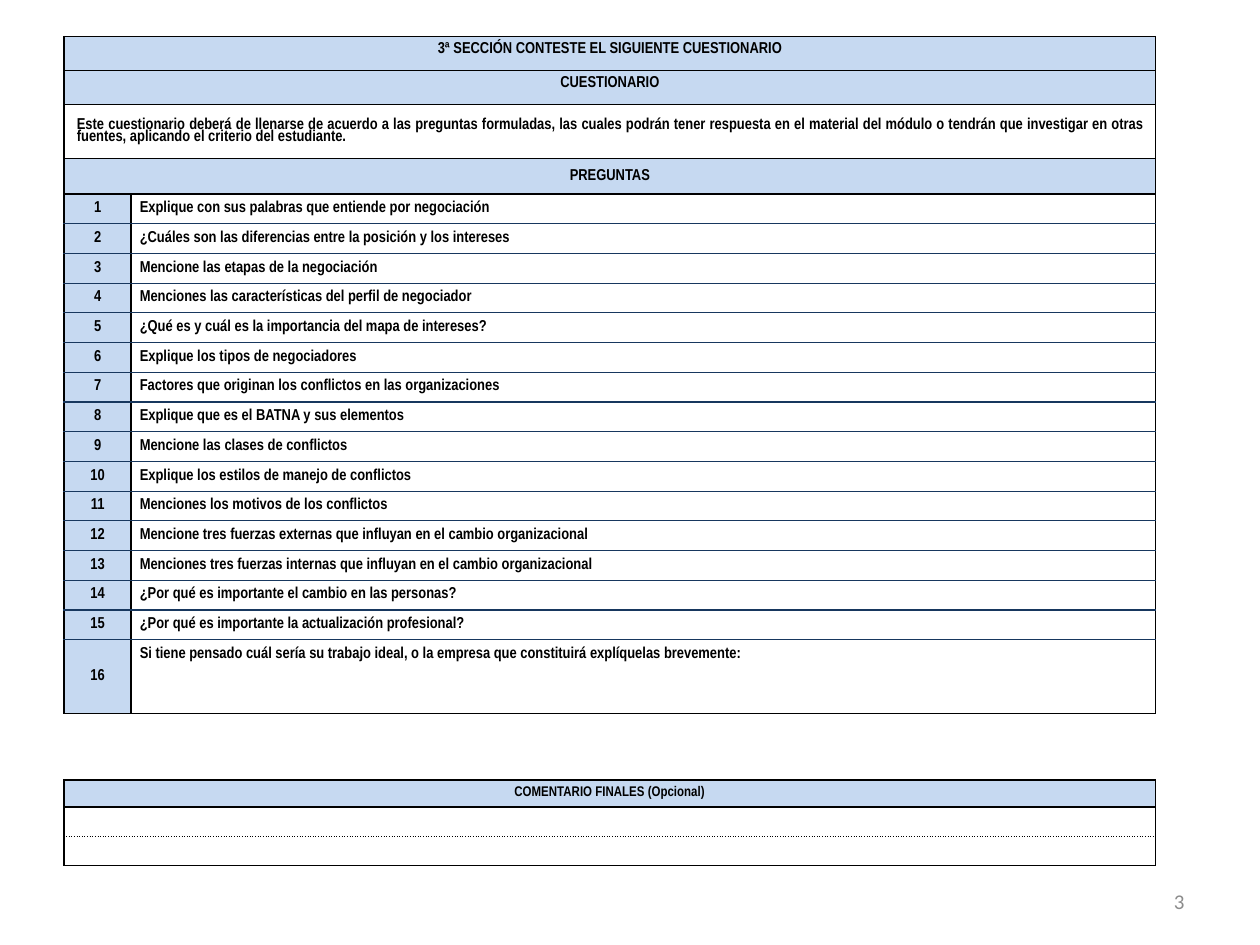
from dataclasses import dataclass

from lxml import etree
from pptx import Presentation
from pptx import util as u
from pptx.dml import color
from pptx.enum import text
from pptx.oxml import ns


@dataclass(frozen=True)
class Theme:
    """Colours, fonts and type sizes of the slide."""
    band: str = "C6D9F1"
    paper: str = "FFFFFF"
    ink: str = "000000"
    rule: str = "17375E"
    muted: str = "8C8C8C"
    table_font: str = "Arial Narrow"
    number_font: str = "Calibri"
    body: float = 9
    small: float = 8
    number: float = 12


THEME = Theme()
SOLID = (THEME.ink, 1, "solid")
THIN = (THEME.rule, 0.75, "solid")
DOTTED = (THEME.ink, 0.75, "sysDot")
CENTER, JUSTIFY = text.PP_ALIGN.CENTER, text.PP_ALIGN.JUSTIFY
TOP, MIDDLE = text.MSO_ANCHOR.TOP, text.MSO_ANCHOR.MIDDLE

HEADINGS = [
    ("3ª SECCIÓN CONTESTE EL SIGUIENTE CUESTIONARIO", 0.27, THEME.band, CENTER, TOP),
    ("CUESTIONARIO", 0.27, THEME.band, CENTER, TOP),
    ("Este cuestionario deberá de llenarse de acuerdo a las preguntas formuladas, "
     "las cuales podrán tener respuesta en el material del módulo o tendrán que "
     "investigar en otras fuentes, aplicando el criterio del estudiante.",
     0.43, None, JUSTIFY, MIDDLE),
    ("PREGUNTAS", 0.28, THEME.band, CENTER, MIDDLE),
]
QUESTIONS = [
    "Explique con sus palabras que entiende por negociación",
    "¿Cuáles son las diferencias entre la posición y los intereses",
    "Mencione las etapas de la negociación",
    "Menciones las características del perfil de negociador",
    "¿Qué es y cuál es la importancia del mapa de intereses?",
    "Explique los tipos de negociadores",
    "Factores que originan los conflictos en las organizaciones",
    "Explique que es el BATNA y sus elementos",
    "Mencione las clases de conflictos",
    "Explique los estilos de manejo de conflictos",
    "Menciones los motivos de los conflictos",
    "Mencione tres fuerzas externas que influyan en el cambio organizacional",
    "Menciones tres fuerzas internas que influyan en el cambio organizacional",
    "¿Por qué es importante el cambio en las personas?",
    "¿Por qué es importante la actualización profesional?",
    "Si tiene pensado cuál sería su trabajo ideal, o la empresa que constituirá "
    "explíquelas brevemente:",
]


def style_font(font, name, size, rgb, bold=False):
    """Give a font its face, size, colour and weight."""
    font.name, font.size, font.bold = name, u.Pt(size), bold
    font.color.rgb = color.RGBColor.from_string(rgb)


def set_borders(cell, top=SOLID, bottom=SOLID):
    """Draw solid sides and the given top and bottom; None leaves an edge open."""
    properties = cell._tc.get_or_add_tcPr()
    edges = (("a:lnL", SOLID), ("a:lnR", SOLID), ("a:lnT", top), ("a:lnB", bottom))
    for position, (tag, edge) in enumerate(edges):
        line = etree.Element(ns.qn(tag))
        properties.insert(position, line)
        if edge is None:
            etree.SubElement(line, ns.qn("a:noFill"))
            continue
        rgb, width, dash = edge
        line.set("w", str(int(u.Pt(width))))
        fill = etree.SubElement(line, ns.qn("a:solidFill"))
        etree.SubElement(fill, ns.qn("a:srgbClr"), val=rgb)
        etree.SubElement(line, ns.qn("a:prstDash"), val=dash)


def fill_cell(cell, words="", fill=None, align=CENTER, anchor=MIDDLE,
              size=THEME.body, margins=(0.1, 0.05), top=SOLID, bottom=SOLID):
    """Write one table cell with its fill, margins and borders."""
    cell.margin_left = cell.margin_right = u.Inches(margins[0])
    cell.margin_top = cell.margin_bottom = u.Inches(margins[1])
    cell.vertical_anchor = anchor
    if fill:
        cell.fill.solid()
        cell.fill.fore_color.rgb = color.RGBColor.from_string(fill)
    else:
        cell.fill.background()
    set_borders(cell, top, bottom)
    paragraph = cell.text_frame.paragraphs[0]
    paragraph.text = words
    paragraph.alignment = align
    paragraph.line_spacing = 0.85
    for run in paragraph.runs:
        style_font(run.font, THEME.table_font, size, THEME.ink, True)
    if not words:
        etree.SubElement(paragraph._p, ns.qn("a:endParaRPr"), sz=str(int(size * 100)))


def add_grid(slide, box, widths, heights):
    """Add a plain table at the box with the given column widths and row heights."""
    left, top, width = box
    frame = slide.shapes.add_table(
        len(heights), len(widths), u.Inches(left), u.Inches(top),
        u.Inches(width), u.Inches(sum(heights)))
    grid = frame.table
    grid.first_row = grid.horz_banding = False
    for column, size in zip(grid.columns, widths):
        column.width = u.Inches(size)
    for row, size in zip(grid.rows, heights):
        row.height = u.Inches(size)
    return grid


def add_questionnaire(slide, box):
    """Place the headings and the numbered questions in one table."""
    number_width, question_height, answer_height = 0.53, 0.236, 0.35
    heights = [heading[1] for heading in HEADINGS]
    heights += [question_height] * len(QUESTIONS) + [answer_height]
    grid = add_grid(slide, box, [number_width, box[2] - number_width], heights)

    for row, (words, _, fill, align, anchor) in enumerate(HEADINGS):
        fill_cell(grid.cell(row, 0), words, fill, align, anchor)
        fill_cell(grid.cell(row, 1))
        grid.cell(row, 0).merge(grid.cell(row, 1))

    first, last = len(HEADINGS), len(HEADINGS) + len(QUESTIONS) - 1
    for row, question in enumerate(QUESTIONS, first):
        top = SOLID if row == first else THIN
        fill_cell(grid.cell(row, 0), str(row - first + 1), THEME.band, top=top,
                  bottom=SOLID if row == last else THIN)
        fill_cell(grid.cell(row, 1), question, align=JUSTIFY, margins=(0.07, 0.04),
                  top=top, bottom=None if row == last else THIN)
    fill_cell(grid.cell(last + 1, 0), fill=THEME.band)
    fill_cell(grid.cell(last + 1, 1), top=None)
    grid.cell(last, 0).merge(grid.cell(last + 1, 0))


def add_comments(slide, box):
    """Place the optional comments table with its two writing lines."""
    grid = add_grid(slide, box, [box[2]], [0.204] * 3)
    fill_cell(grid.cell(0, 0), "COMENTARIO FINALES (Opcional)", THEME.band,
              size=THEME.small)
    fill_cell(grid.cell(1, 0), fill=THEME.paper, size=THEME.small, bottom=DOTTED)
    fill_cell(grid.cell(2, 0), fill=THEME.paper, size=THEME.small, top=DOTTED)


def add_page_number(slide, box):
    """Place the page number at the right of its box."""
    frame = slide.shapes.add_textbox(*map(u.Inches, box)).text_frame
    frame.word_wrap = True
    frame.vertical_anchor = MIDDLE
    frame.text = "3"
    paragraph = frame.paragraphs[0]
    paragraph.alignment = text.PP_ALIGN.RIGHT
    style_font(paragraph.runs[0].font, THEME.number_font, THEME.number, THEME.muted)


def main():
    """Build the questionnaire slide and save it."""
    deck = Presentation()
    deck.slide_width, deck.slide_height = u.Inches(10), u.Inches(7.5)
    slide = deck.slides.add_slide(deck.slide_layouts[6])
    add_page_number(slide, (7.17, 6.95, 2.33, 0.4))
    add_questionnaire(slide, (0.51, 0.29, 8.66))
    add_comments(slide, (0.51, 6.19, 8.66))
    deck.save("out.pptx")


if __name__ == "__main__":
    main()
